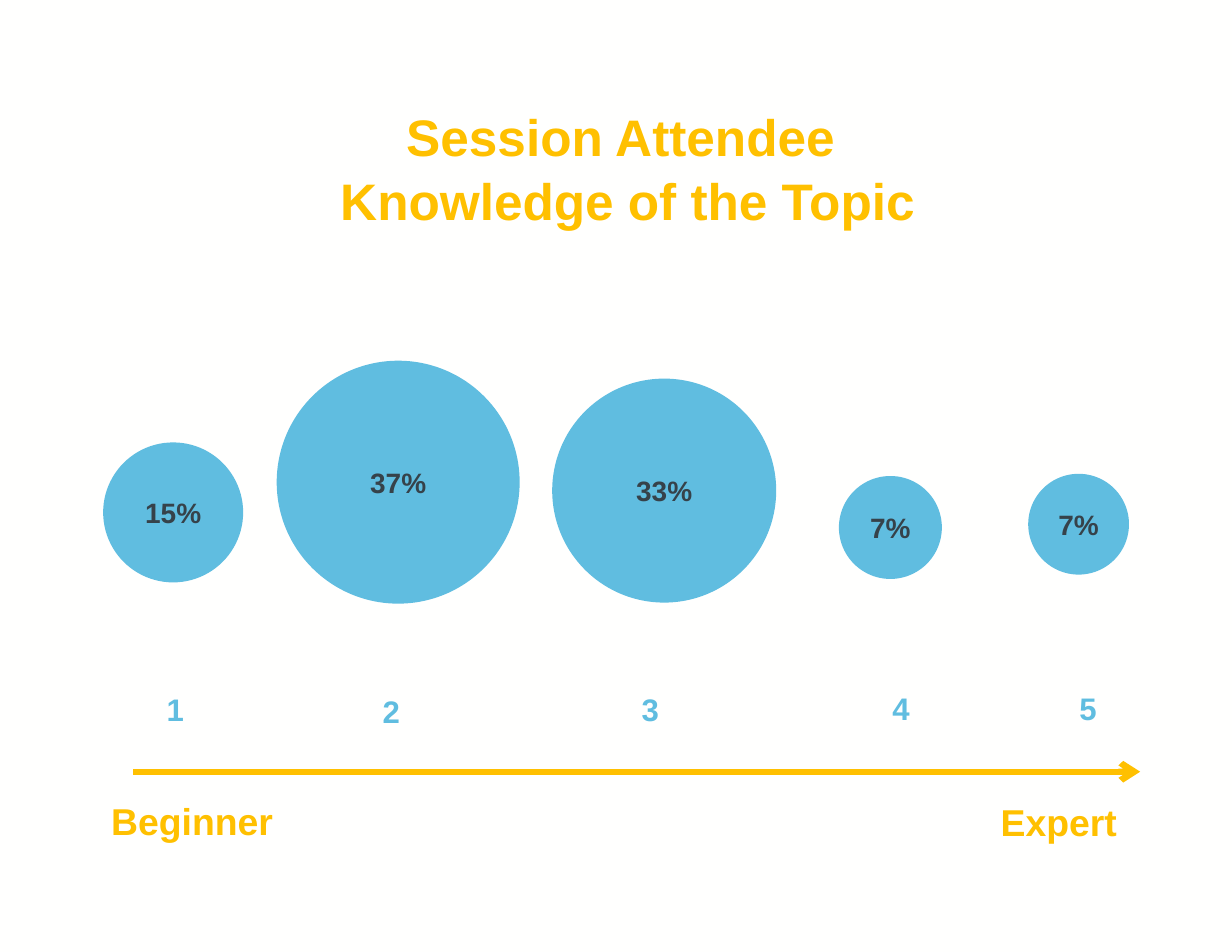
from lxml import etree
from pptx import Presentation
from pptx.dml.color import RGBColor
from pptx.enum.shapes import MSO_CONNECTOR, MSO_SHAPE
from pptx.enum.text import MSO_ANCHOR, PP_ALIGN
from pptx.oxml.ns import qn
from pptx.util import Pt

STRAIGHT = MSO_CONNECTOR.STRAIGHT
OVAL = MSO_SHAPE.OVAL
CENTER = PP_ALIGN.CENTER
TOP, MIDDLE = MSO_ANCHOR.TOP, MSO_ANCHOR.MIDDLE

# Content; all lengths in points
TITLE_LINES = ["Session Attendee ", "Knowledge of the Topic"]
TITLE_BOX = (96.5, 61.2, 614.2, 106.6)

# share, circle center x, center y, diameter, level center x, level top
LEVELS = [
    ("15%", 111.3, 329.4, 90, 112.7, 440.6),
    ("37%", 256, 310, 156.2, 251.6, 441.4),
    ("33%", 427, 315.4, 144, 418, 440.6),
    ("7%", 572.4, 339.1, 66.2, 579.2, 439.9),
    ("7%", 693.4, 337, 64.8, 699.5, 439.9),
]
# text, left, top, width
SCALE_ENDS = [("Beginner", 56.9, 509.8, 133.2), ("Expert", 620.6, 510.5, 120.2)]
AXIS_LEFT, AXIS_RIGHT, AXIS_Y = 85.7, 733, 496.1
LEVEL_WIDTH, LEVEL_HEIGHT, END_HEIGHT = 120.2, 31.7, 36

THEME = {
    "font": "Arial",
    "background": RGBColor.from_string("FFFFFE"),
    "gold": RGBColor.from_string("FFC000"),
    "blue": RGBColor.from_string("60BDE0"),
    "dark": RGBColor.from_string("36424A"),
    "title": 33, "end": 24, "level": 20, "share": 18, "axis": 4,
}


def write(shape, lines, size, color, anchor=TOP):
    """Centre bold lines of text in a shape."""
    frame = shape.text_frame
    frame.word_wrap = True
    frame.vertical_anchor = anchor
    paragraph = frame.paragraphs[0]
    paragraph.alignment = CENTER
    for index, line in enumerate(lines):
        if index:
            paragraph.add_line_break()
        run = paragraph.add_run()
        run.text = line
        run.font.name = THEME["font"]
        run.font.size = Pt(THEME[size])
        run.font.bold = True
        run.font.color.rgb = THEME[color]
    return frame


def add_text(slide, box, lines, size, color):
    return write(slide.shapes.add_textbox(*map(Pt, box)), lines, size, color)


def add_circle(slide, center_x, center_y, diameter, share):
    box = (center_x - diameter / 2, center_y - diameter / 2, diameter, diameter)
    circle = slide.shapes.add_shape(OVAL, *map(Pt, box))
    circle.shadow.inherit = False
    circle.fill.solid()
    circle.fill.fore_color.rgb = THEME["blue"]
    circle.line.fill.background()
    write(circle, [share], "share", "dark", MIDDLE)


def add_axis(slide):
    ends = (AXIS_LEFT, AXIS_Y, AXIS_RIGHT, AXIS_Y)
    axis = slide.shapes.add_connector(STRAIGHT, *map(Pt, ends))
    axis.line.color.rgb = THEME["gold"]
    axis.line.width = Pt(THEME["axis"])
    etree.SubElement(axis.line._get_or_add_ln(), qn("a:tailEnd"), type="arrow")
    etree.SubElement(axis._element.spPr, qn("a:effectLst"))


def main():
    presentation = Presentation()
    presentation.slide_width, presentation.slide_height = Pt(792), Pt(612)
    slide = presentation.slides.add_slide(presentation.slide_layouts[6])
    slide.background.fill.solid()
    slide.background.fill.fore_color.rgb = THEME["background"]

    # Title
    title = add_text(slide, TITLE_BOX, TITLE_LINES, "title", "gold")
    title.margin_left = title.margin_right = Pt(7.9)
    title.margin_top = title.margin_bottom = Pt(4.3)
    title.paragraphs[0].line_spacing = 1.05

    # Knowledge axis and its end labels
    add_axis(slide)
    for label, left, top, width in SCALE_ENDS:
        add_text(slide, (left, top, width, END_HEIGHT), [label], "end", "gold")

    # Share circles and level numbers
    for number, (share, x, y, diameter, level_x, level_top) in enumerate(LEVELS, 1):
        add_circle(slide, x, y, diameter, share)
        box = (level_x - LEVEL_WIDTH / 2, level_top, LEVEL_WIDTH, LEVEL_HEIGHT)
        add_text(slide, box, [str(number)], "level", "blue")

    presentation.save("out.pptx")


if __name__ == "__main__":
    main()
